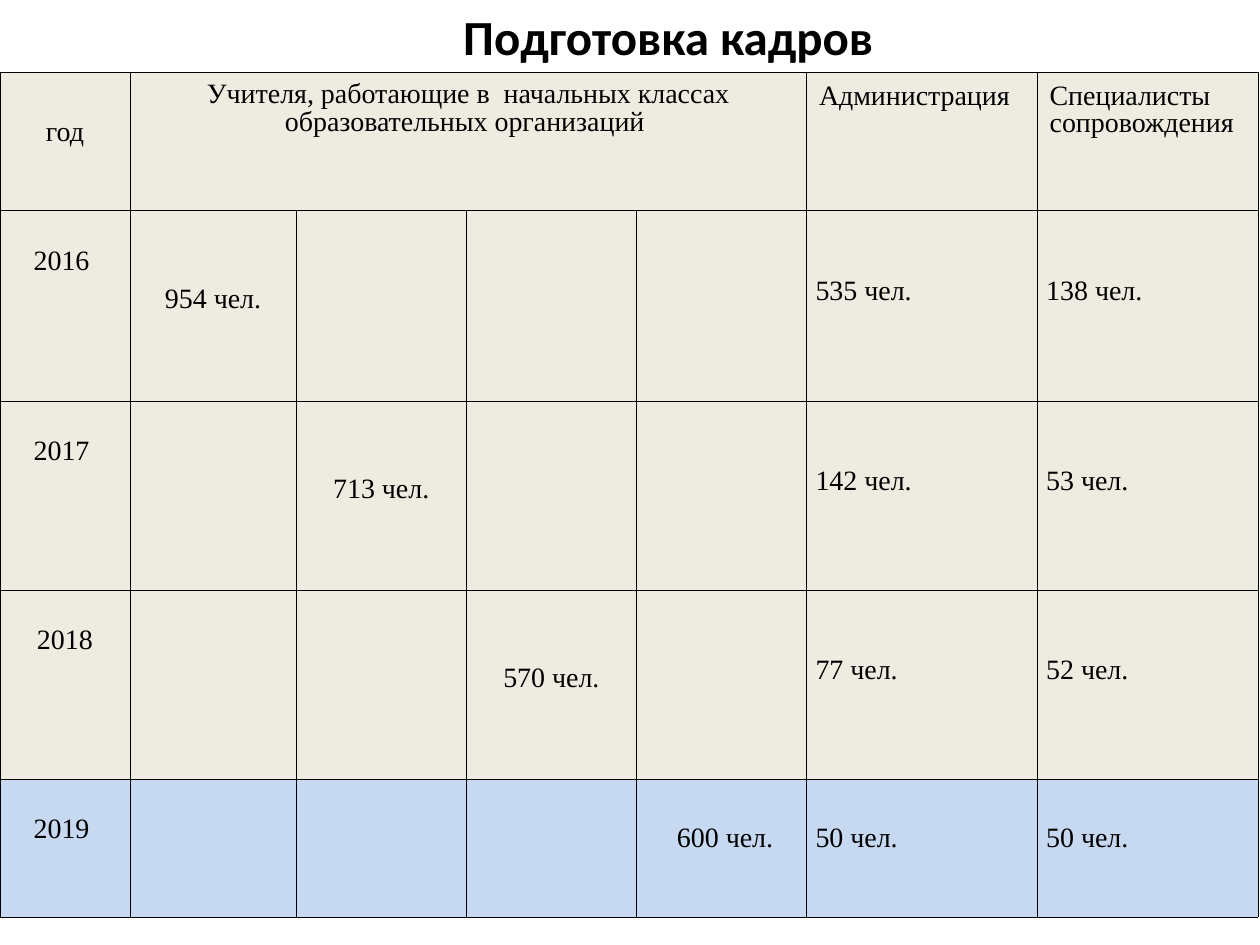
from lxml import etree
from pptx import Presentation
from pptx import util as u
from pptx.dml.color import RGBColor
from pptx.enum import text
from pptx.oxml.ns import qn

# Content
TITLE = "Подготовка кадров "
HEADERS = {
    0: "год",
    1: "Учителя, работающие в  начальных классах образовательных организаций ",
    5: "Администрация",
    6: "Специалисты\nсопровождения",
}
# Year, teachers, administration, support specialists
YEARS = [
    ("2016 ", "954 чел.", "535 чел.", "138 чел."),
    ("2017 ", "713 чел.", "142 чел.", "53 чел."),
    (" 2018 ", "570 чел.", "77 чел.", "52 чел."),
    ("2019 ", " 600 чел.", "50 чел.", "50 чел."),
]

# Layout in centimetres
COLUMN_WIDTHS = [2.62, 3.35, 3.43, 3.43, 3.43, 4.65, 4.45]
ROW_HEIGHTS = [2.79, 3.84, 3.81, 3.81, 2.79]
TABLE_TOP = 1.45
SIDE = 0.18
BEIGE, BLUE, BLACK = "EEECE1", "C6D9F1", "000000"
CENTER, LEFT = text.PP_ALIGN.CENTER, text.PP_ALIGN.LEFT


def color(value):
    return RGBColor.from_string(value)


def write(frame, content, size=16, font="Times New Roman", bold=False,
          align=CENTER, spacing=None, top=0.13, side=SIDE):
    frame.word_wrap = True
    frame.margin_left = frame.margin_right = u.Cm(side)
    frame.margin_top, frame.margin_bottom = u.Cm(top), u.Cm(0.13)
    for index, line in enumerate(content.split("\n")):
        paragraph = frame.paragraphs[0] if index == 0 else frame.add_paragraph()
        paragraph.alignment = align
        paragraph.line_spacing = spacing
        run = paragraph.add_run()
        run.text = line
        run.font.size, run.font.name, run.font.bold = u.Pt(size), font, bold
        run.font.color.rgb = color(BLACK)


def style_cell(cell, fill):
    cell.fill.solid()
    cell.fill.fore_color.rgb = color(fill)
    properties = cell._tc.get_or_add_tcPr()
    for index, edge in enumerate(("a:lnL", "a:lnR", "a:lnT", "a:lnB")):
        border = etree.Element(qn(edge), w=str(u.Pt(0.23)))
        solid = etree.SubElement(border, qn("a:solidFill"))
        etree.SubElement(solid, qn("a:srgbClr"), val=BLACK)
        properties.insert(index, border)


def write_cell(cell, content, **style):
    write(cell.text_frame, content, **style)
    # Cell margins belong to the cell, not to its text body
    cell.margin_left = cell.margin_right = u.Cm(style.get("side", SIDE))
    cell.margin_top, cell.margin_bottom = u.Cm(style["top"]), u.Cm(0.13)


def add_table(slide):
    shape = slide.shapes.add_table(
        len(ROW_HEIGHTS), len(COLUMN_WIDTHS), 0, u.Cm(TABLE_TOP),
        u.Cm(sum(COLUMN_WIDTHS)), u.Cm(sum(ROW_HEIGHTS)))
    table = shape.table
    table.first_row = table.horz_banding = False
    for column, width in zip(table.columns, COLUMN_WIDTHS):
        column.width = u.Cm(width)
    for row, height in zip(table.rows, ROW_HEIGHTS):
        row.height = u.Cm(height)
    last = len(YEARS)
    for row in range(last + 1):
        for column in range(len(COLUMN_WIDTHS)):
            style_cell(table.cell(row, column), BLUE if row == last else BEIGE)

    # Header row: the teachers' heading spans one column per year
    table.cell(0, 1).merge(table.cell(0, last))
    header_styles = {
        0: dict(spacing=1.04, top=0.88),
        1: dict(spacing=0.9, top=0.18),
        5: dict(spacing=0.87, top=0.25, side=0.25, align=LEFT),
        6: dict(spacing=0.87, top=0.25, side=0.25, align=LEFT),
    }
    for column, content in HEADERS.items():
        write_cell(table.cell(0, column), content, **header_styles[column])

    # Year rows: the teachers' figure steps one column right each year
    for row, (year, teachers, *others) in enumerate(YEARS, start=1):
        write_cell(table.cell(row, 0), year, spacing=0.9, top=0.76)
        low = 0.85 if row == last else 1.45
        write_cell(table.cell(row, row), teachers, spacing=1.04, top=low)
        style = (dict(spacing=1.04, top=0.85) if row == last
                 else dict(spacing=0.87, top=1.38))
        for column, content in enumerate(others, start=5):
            write_cell(table.cell(row, column), content, align=LEFT, **style)


def main():
    presentation = Presentation()
    presentation.slide_width, presentation.slide_height = u.Cm(25.4), u.Cm(19.05)
    slide = presentation.slides.add_slide(presentation.slide_layouts[6])
    add_table(slide)

    # Title
    title = slide.shapes.add_textbox(u.Cm(3.71), 0, u.Cm(19.74), u.Cm(TABLE_TOP))
    write(title.text_frame, TITLE, size=28, font="Calibri", bold=True, side=0.25)
    presentation.save("out.pptx")


if __name__ == "__main__":
    main()
